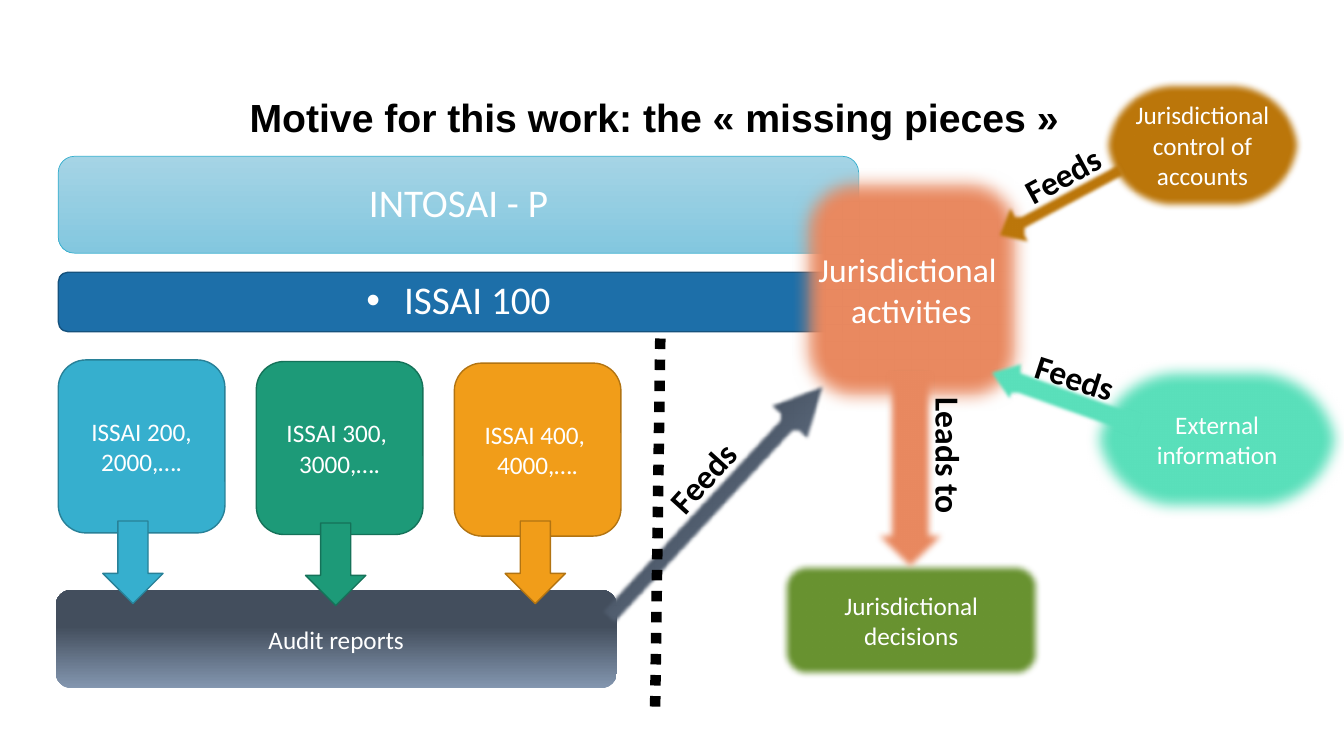
from dataclasses import dataclass

from lxml import etree
from pptx import Presentation
from pptx import util as u
from pptx.dml.color import RGBColor
from pptx.enum import dml, shapes, text
from pptx.oxml.ns import qn

ROUNDED = shapes.MSO_SHAPE.ROUNDED_RECTANGLE
ARROW = shapes.MSO_SHAPE.RIGHT_ARROW


@dataclass(frozen=True)
class Theme:
    heading_font: str = "Arial"
    body_font: str = "Calibri"
    large: int = 28
    medium: int = 24
    small: int = 18
    black: str = "000000"
    white: str = "FFFFFF"
    sky: str = "36AFCE"
    sky_line: str = "288198"
    blue: str = "1D6FA9"
    blue_line: str = "15527D"
    green: str = "1D9A78"
    green_line: str = "157259"
    orange: str = "F19D19"
    orange_line: str = "B27412"
    olive: str = "699331"
    mint: str = "5AE0BB"
    brown: str = "BC770B"
    coral: str = "E98960"
    # A gradient is (start colour, end colour, end position, angle).
    pale_blue: tuple = ("A5D4E5", "83C7DF", 1, 270)
    slate: tuple = ("8497B0", "434E5D", 0.63, 90)


class Diagram:
    def __init__(self, slide, theme):
        self.slide = slide
        self.theme = theme

    def place(self, shape, box):
        shape.left, shape.top, shape.width, shape.height = map(u.Cm, box)

    def set_text(self, shape, content, size, color, font=None, bold=False,
                 align=text.PP_ALIGN.CENTER, spacing=None):
        frame = shape.text_frame
        frame.text = content
        frame.vertical_anchor = text.MSO_ANCHOR.MIDDLE
        frame.word_wrap = True
        frame.auto_size = text.MSO_AUTO_SIZE.NONE
        for paragraph in frame.paragraphs:
            paragraph.alignment = align
            paragraph.space_before = u.Pt(0)
            if spacing:
                paragraph.line_spacing = spacing
            paragraph.font.name = font or self.theme.body_font
            paragraph.font.size = u.Pt(size)
            paragraph.font.bold = bold
            paragraph.font.color.rgb = RGBColor.from_string(color)

    def set_bar_text(self, shape, content):
        self.set_text(shape, content, self.theme.large, self.theme.white, spacing=0.9)

    def paint(self, shape, fill, line=None, line_width=1):
        if isinstance(fill, tuple):
            start, end, end_position, angle = fill
            shape.fill.gradient()
            shape.fill.gradient_angle = angle
            first, last = shape.fill.gradient_stops
            first.color.rgb = RGBColor.from_string(start)
            last.color.rgb = RGBColor.from_string(end)
            first.position, last.position = 0, end_position
        else:
            shape.fill.solid()
            shape.fill.fore_color.rgb = RGBColor.from_string(fill)
        if line:
            shape.line.color.rgb = RGBColor.from_string(line)
            shape.line.width = u.Pt(line_width)
        else:
            shape.line.fill.background()

    def title(self, content, box):
        shape = self.slide.shapes.title
        self.place(shape, box)
        self.set_text(shape, content, self.theme.large, self.theme.black,
                      self.theme.heading_font, bold=True, spacing=0.9)

    def body_bar(self, content, box, fill, line):
        """Turn the body placeholder into a rounded, unbulleted bar."""
        shape = self.slide.placeholders[1]
        self.place(shape, box)
        geometry = etree.SubElement(shape._element.spPr, qn("a:prstGeom"), prst="roundRect")
        etree.SubElement(geometry, qn("a:avLst"))
        self.paint(shape, fill, line)
        properties = shape.text_frame.paragraphs[0]._p.get_or_add_pPr()
        properties.set("marL", "0")
        properties.set("indent", "0")
        etree.SubElement(properties, qn("a:buNone"))
        self.set_bar_text(shape, content)

    def block(self, kind, box, fill, line=None, line_width=1, adjust=(), rotation=0, soft=0):
        """Add a preset shape; soft is the soft edge radius in points."""
        shape = self.slide.shapes.add_shape(kind, *map(u.Cm, box))
        self.paint(shape, fill, line, line_width)
        shape.rotation = rotation
        for index, value in enumerate(adjust):
            shape.adjustments[index] = value
        shape.shadow.inherit = False
        if soft:
            effects = shape._element.spPr.find(qn("a:effectLst"))
            etree.SubElement(effects, qn("a:softEdge"), rad=str(int(u.Pt(soft))))
        return shape

    def box(self, content, box, fill, line=None, size=None, **style):
        shape = self.block(ROUNDED, box, fill, line, **style)
        self.set_text(shape, content, size or self.theme.small, self.theme.white)

    def bar(self, content, box, fill, line):
        self.set_bar_text(self.block(ROUNDED, box, fill, line, 0.5), content)

    def label(self, content, box, rotation):
        shape = self.slide.shapes.add_textbox(*map(u.Cm, box))
        self.set_text(shape, content, self.theme.medium, self.theme.black, bold=True,
                      align=text.PP_ALIGN.LEFT)
        shape.text_frame.vertical_anchor = text.MSO_ANCHOR.TOP
        shape.text_frame.word_wrap = False
        shape.rotation = rotation

    def dotted_line(self, start, end):
        line = self.slide.shapes.add_connector(
            shapes.MSO_CONNECTOR.STRAIGHT, *map(u.Cm, start + end))
        line.line.color.rgb = RGBColor.from_string(self.theme.black)
        line.line.width = u.Pt(7.5)
        line.line.dash_style = dml.MSO_LINE.ROUND_DOT
        etree.SubElement(line._element.spPr, qn("a:effectLst"))


def main():
    presentation = Presentation()
    presentation.slide_width, presentation.slide_height = u.Cm(33.87), u.Cm(19.05)
    theme = Theme()
    slide = presentation.slides.add_slide(presentation.slide_layouts[1])
    diagram = Diagram(slide, theme)

    diagram.title("Motive for this work: the « missing pieces »", (1.88, 1.17, 29.21, 3.68))
    diagram.body_bar("ISSAI 100", (1.47, 6.86, 20.17, 1.5), theme.blue, theme.blue_line)

    standards = [
        ("ISSAI 200, 2000,….", theme.sky, theme.sky_line, 2.31, 13.41),
        ("ISSAI 300, \v3000,….", theme.green, theme.green_line, 7.42, 13.46),
        ("ISSAI 400, \v4000,….", theme.orange, theme.orange_line, 12.45, 13.41),
    ]
    for column, (content, fill, line, _, _) in enumerate(standards):
        diagram.box(content, (1.47 + 4.99 * column, 9.07 + 0.04 * column, 4.2, 4.36), fill, line)

    diagram.box("Audit reports", (1.4, 14.86, 14.15, 2.49), theme.slate)
    diagram.box("Jurisdictional decisions", (19.69, 14.17, 6.55, 2.92),
                theme.olive, theme.green_line, soft=5)
    diagram.box("External information", (27.36, 9.07, 6.63, 3.99),
                theme.mint, theme.sky_line, adjust=[0.5], soft=10)
    diagram.box("Jurisdictional control of accounts", (27.79, 2.03, 5.03, 3.25),
                theme.brown, theme.green_line, adjust=[0.5], soft=5)
    diagram.bar("INTOSAI - P", (1.47, 3.94, 20.17, 2.44), theme.pale_blue, theme.sky)
    diagram.box("Jurisdictional \vactivities", (19.96, 4.24, 6.02, 6.12), theme.coral,
                theme.green_line, size=theme.medium, adjust=[0.19], soft=12.5)

    for _, fill, line, left, top in standards:
        diagram.block(ARROW, (left, top, 2.08, 1.52), fill, line, rotation=90)
    flows = [
        ((24.87, 4.45, 3.66, 1.32), theme.brown, theme.green_line, (0.35, 0.59), 152.1, 2.5),
        ((13.97, 11.84, 8.2, 1.52), theme.slate, None, (0.4, 1.01), 312.8, 2.5),
        ((24.74, 9.42, 4.09, 1.24), theme.mint, theme.sky_line, (0.52, 0.7), 199.4, 2.5),
        ((20.32, 10.72, 5.23, 2.44), theme.coral, theme.green_line, (), 90, 5),
    ]
    for box, fill, line, adjust, rotation, soft in flows:
        diagram.block(ARROW, box, fill, line, adjust=adjust, rotation=rotation, soft=soft)

    diagram.dotted_line((16.64, 8.53), (16.51, 17.81))

    for left, top, rotation in [(16.41, 11.33, 312.2), (25.5, 3.73, 331.5), (25.83, 8.89, 17.9)]:
        diagram.label("Feeds", (left, top, 2.69, 1.27), rotation)
    diagram.label("Leads to", (22.05, 11, 3.73, 1.27), 90)

    presentation.save("out.pptx")


if __name__ == "__main__":
    main()
